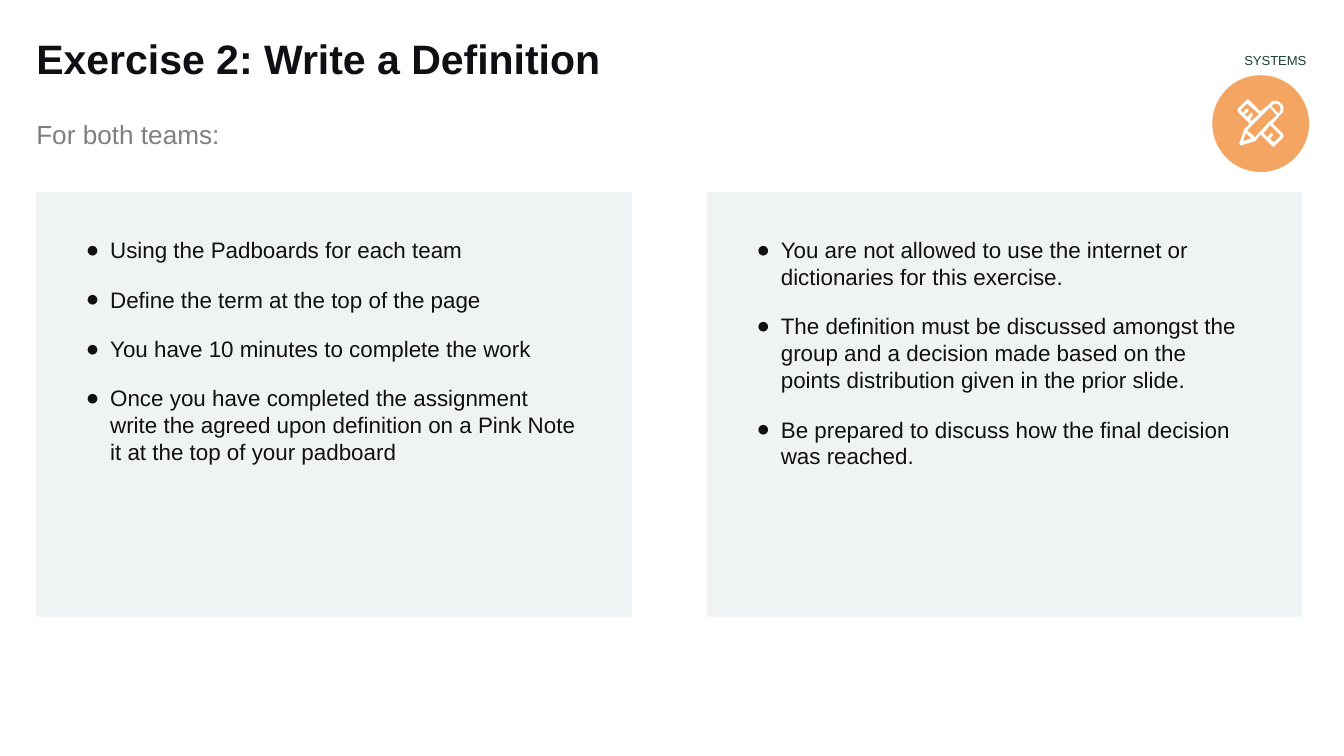
from dataclasses import dataclass

from lxml.etree import SubElement
from pptx import Presentation
from pptx.dml.color import RGBColor
from pptx.enum.shapes import MSO_SHAPE
from pptx.enum.text import PP_ALIGN
from pptx.oxml.ns import qn
from pptx.util import Inches, Pt


@dataclass(frozen=True)
class Theme:
    font: str = "Arial"
    ink: str = "0F0F14"
    muted: str = "7F7F7F"
    label: str = "1B4036"
    panel: str = "F0F3F3"
    accent: str = "F4A562"
    white: str = "FFFFFF"
    title_size: int = 22
    subtitle_size: int = 14
    body_size: int = 12
    label_size: int = 7


@dataclass(frozen=True)
class Box:
    left: float
    top: float
    width: float
    height: float

    def lengths(self):
        return [Inches(v) for v in (self.left, self.top, self.width, self.height)]


@dataclass(frozen=True)
class Heading:
    text: str
    box: Box
    size: int
    color: str
    bold: bool = False
    line_spacing: float = 1.0
    align: PP_ALIGN = PP_ALIGN.LEFT
    right_inset: float = 0.1


@dataclass(frozen=True)
class Panel:
    left: float
    text_width: float
    points: tuple[str, ...]


THEME = Theme()
SLIDE_WIDTH = 10
SLIDE_HEIGHT = SLIDE_WIDTH * 9 / 16

HEADINGS = (
    Heading("Exercise 2: Write a Definition", Box(0.27, 0.29, 7.99, 0.59),
            THEME.title_size, THEME.ink, bold=True, line_spacing=0.9),
    Heading("For both teams:", Box(0.27, 0.88, 7.09, 0.47),
            THEME.subtitle_size, THEME.muted),
    Heading("SYSTEMS", Box(6.65, 0.4, 3.07, 0.25), THEME.label_size, THEME.label,
            line_spacing=0.9, align=PP_ALIGN.RIGHT, right_inset=0),
)

PANELS = (
    Panel(5.26, 3.72, (
        "You are not allowed to use the internet or dictionaries for this exercise.",
        "The definition must be discussed amongst the group and a decision made "
        "based on the points distribution given in the prior slide.",
        "Be prepared to discuss how the final decision was reached.",
    )),
    Panel(0.27, 3.8, (
        "Using the Padboards for each team",
        "Define the term at the top of the page",
        "You have 10 minutes to complete the work",
        "Once you have completed the assignment write the agreed upon definition "
        "on a Pink Note it at the top of your padboard",
    )),
)

SILHOUETTE = ((9, 18), (5, 22), (1, 33), (2, 34), (3, 34), (13, 31), (17, 26),
              (26, 35), (27, 35), (34, 28), (34, 26), (26, 18), (32, 11), (34, 9),
              (34, 5), (32, 3), (30, 1), (26, 1), (24, 3), (17, 9), (8, 0), (7, 0),
              (0, 7), (0, 9))
RULER_END = ((21, 23), (19, 25), (22, 28), (25, 25), (26, 25), (26, 27), (24, 29),
             (27, 32), (32, 27), (24, 19))
RULER_START = ((16, 11), (7, 3), (2, 8), (4, 10), (6, 7), (8, 7), (8, 9), (5, 11),
               (7, 13), (10, 10), (11, 10), (11, 12), (9, 15), (10, 16))
PENCIL_TIP = ((4, 31), (10, 29), (6, 25))
PENCIL_BODY = ((29, 12), (24, 6), (7, 23), (13, 28), (23, 17))
PENCIL_CAP = ((30, 10), (25, 5), (26, 4), (28, 3), (31, 4), (32, 7), (31, 10))


def paint(shape, color: str) -> None:
    shape.shadow.inherit = False
    shape.fill.solid()
    shape.fill.fore_color.rgb = RGBColor.from_string(color)
    shape.line.fill.background()


def add_text_frame(slide, box: Box, top_inset: float, right_inset: float):
    frame = slide.shapes.add_textbox(*box.lengths()).text_frame
    frame.word_wrap = True
    frame.margin_left = 0
    frame.margin_top = Inches(top_inset)
    frame.margin_right = Inches(right_inset)
    frame.margin_bottom = Inches(0.1)
    return frame


def add_run(paragraph, text: str, size: int, color: str, bold: bool = False) -> None:
    run = paragraph.add_run()
    run.text = text
    run.font.name = THEME.font
    run.font.size = Pt(size)
    run.font.bold = bold
    run.font.color.rgb = RGBColor.from_string(color)


def add_heading(slide, heading: Heading) -> None:
    frame = add_text_frame(slide, heading.box, 0, heading.right_inset)
    paragraph = frame.paragraphs[0]
    paragraph.alignment = heading.align
    paragraph.line_spacing = heading.line_spacing
    add_run(paragraph, heading.text, heading.size, heading.color, heading.bold)


def set_bullet(paragraph) -> None:
    properties = paragraph._p.get_or_add_pPr()
    properties.set("marL", str(Inches(0.2)))
    properties.set("indent", str(Inches(-0.18)))
    color = SubElement(properties, qn("a:buClr"))
    SubElement(color, qn("a:srgbClr"), val=THEME.ink)
    SubElement(properties, qn("a:buFont"), typeface=THEME.font)
    SubElement(properties, qn("a:buChar"), char="●")


def add_panel(slide, panel: Panel) -> None:
    area = Box(panel.left, 1.43, 4.43, 3.16)
    paint(slide.shapes.add_shape(MSO_SHAPE.RECTANGLE, *area.lengths()), THEME.panel)
    text_box = Box(panel.left + 0.35, 1.66, panel.text_width, 2.56)
    frame = add_text_frame(slide, text_box, 0.1, 0.1)
    for index, point in enumerate(panel.points):
        paragraph = frame.add_paragraph() if index else frame.paragraphs[0]
        set_bullet(paragraph)
        if index:
            paragraph.space_before = Pt(12)
        add_run(paragraph, point, THEME.body_size, THEME.ink)


def add_badge(slide) -> None:
    badge = slide.shapes.add_group_shape()
    disc = Box(9.02, 0.56, 0.72, 0.72)
    paint(badge.shapes.add_shape(MSO_SHAPE.OVAL, *disc.lengths()), THEME.accent)
    builder = badge.shapes.build_freeform(*SILHOUETTE[0], scale=Inches(0.01))
    builder.add_line_segments(SILHOUETTE[1:], close=True)
    for cutout in (RULER_END, PENCIL_TIP, PENCIL_BODY, RULER_START, PENCIL_CAP):
        builder.move_to(*cutout[0])
        builder.add_line_segments(cutout[1:], close=True)
    paint(builder.convert_to_shape(Inches(9.21), Inches(0.74)), THEME.white)


def main() -> None:
    presentation = Presentation()
    presentation.slide_width = Inches(SLIDE_WIDTH)
    presentation.slide_height = Inches(SLIDE_HEIGHT)
    slide = presentation.slides.add_slide(presentation.slide_layouts[6])
    for heading in HEADINGS:
        add_heading(slide, heading)
    for panel in PANELS:
        add_panel(slide, panel)
    add_badge(slide)
    presentation.save("out.pptx")


if __name__ == "__main__":
    main()
